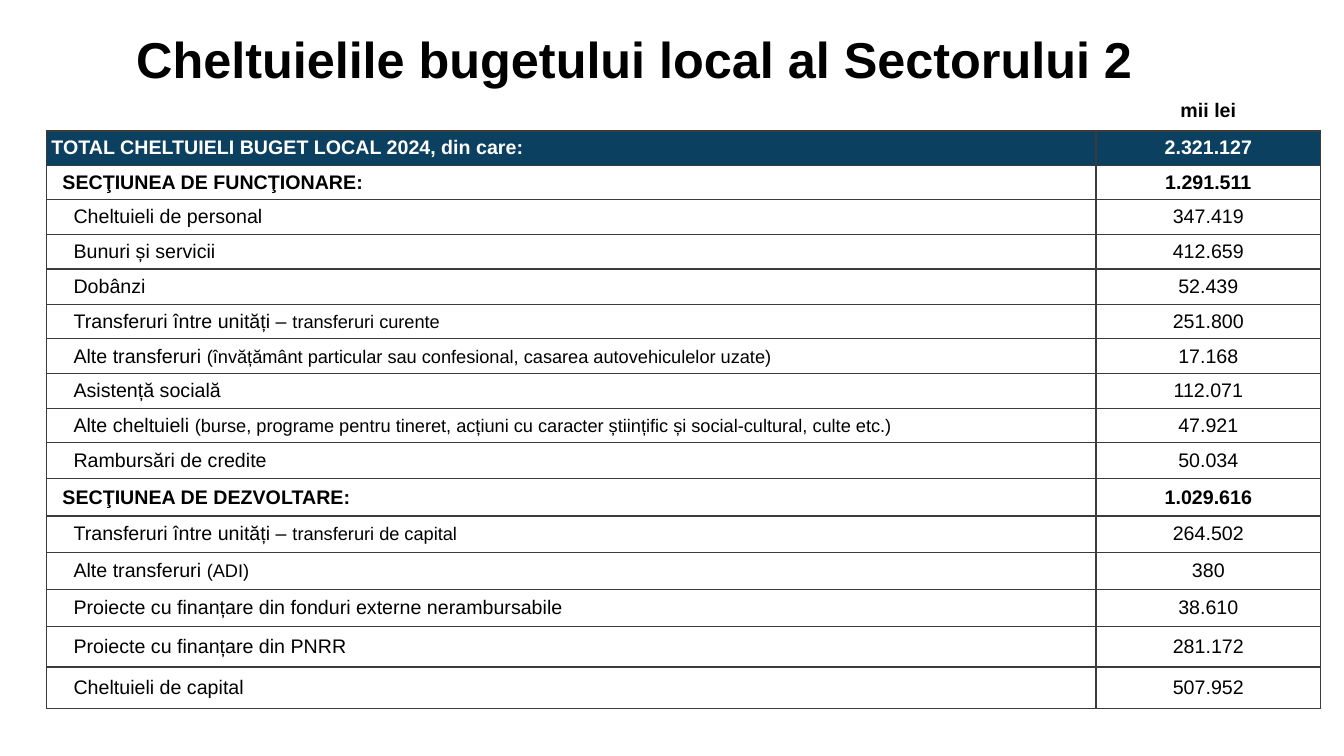
from lxml import etree
from pptx import Presentation
from pptx import util as u
from pptx.dml.color import RGBColor
from pptx.enum import text
from pptx.oxml.ns import qn

TITLE = "Cheltuielile bugetului local al Sectorului 2"
UNIT = "mii lei"
BUDGET = [
    ("total", "TOTAL CHELTUIELI BUGET LOCAL 2024, din care:", "", "2.321.127"),
    ("section", "SECŢIUNEA DE FUNCŢIONARE:", "", "1.291.511"),
    ("item", "Cheltuieli de personal", "", "347.419"),
    ("item", "Bunuri și servicii", "", "412.659"),
    ("item", "Dobânzi", "", "52.439"),
    ("item", "Transferuri între unități – ", "transferuri curente", "251.800"),
    ("item", "Alte transferuri ",
     "(învățământ particular sau confesional, casarea autovehiculelor uzate)", "17.168"),
    ("item", "Asistență socială", "", "112.071"),
    ("item", "Alte cheltuieli ",
     "(burse, programe pentru tineret, acțiuni cu caracter științific și social-cultural, culte etc.)",
     "47.921"),
    ("item", "Rambursări de credite", "", "50.034"),
    ("section", "SECŢIUNEA DE DEZVOLTARE:", "", "1.029.616"),
    ("item", "Transferuri între unități – ", "transferuri de capital", "264.502"),
    ("item", "Alte transferuri ", "(ADI)", "380"),
    ("item", "Proiecte cu finanțare din fonduri externe nerambursabile", "", "38.610"),
    ("item", "Proiecte cu finanțare din PNRR", "", "281.172"),
    ("item", "Cheltuieli de capital", "", "507.952"),
]
COLUMN_WIDTHS = [10.41, 2.23]
ROW_HEIGHTS = [0.4, 0.34, 0.34, 0.35, 0.34, 0.35, 0.34, 0.35, 0.34, 0.34,
               0.36, 0.37, 0.36, 0.37, 0.37, 0.4, 0.41]
INDENTS = {"total": 0.05, "section": 0.16, "item": 0.27}


def rgb(value):
    return RGBColor.from_string(value)


class BudgetSlide:
    font = "Arial"
    ink = "000000"
    paper = "FFFFFF"
    navy = "0B4060"
    rule = "3B3B3B"
    size = 14
    detail_size = 13

    def __init__(self, deck):
        self.slide = deck.slides.add_slide(deck.slide_layouts[5])

    def format_run(self, run, size, color, bold):
        run.font.name = self.font
        run.font.size = u.Pt(size)
        run.font.bold = bold
        run.font.color.rgb = rgb(color)

    def title(self, wording, left, top, width, height):
        heading = self.slide.shapes.title
        heading.left, heading.top = u.Inches(left), u.Inches(top)
        heading.width, heading.height = u.Inches(width), u.Inches(height)
        frame = heading.text_frame
        frame.text = wording
        frame.vertical_anchor = text.MSO_ANCHOR.MIDDLE
        line = frame.paragraphs[0]
        line.alignment = text.PP_ALIGN.LEFT
        self.format_run(line.runs[0], 36, self.ink, True)

    def borders(self, cell, outer, bottom):
        properties = cell._tc.get_or_add_tcPr()
        for side, color in (("L", outer), ("R", outer), ("T", outer), ("B", bottom)):
            edge = etree.SubElement(properties, qn(f"a:ln{side}"), w=str(u.Pt(1)))
            paint = etree.SubElement(edge, qn("a:solidFill"))
            etree.SubElement(paint, qn("a:srgbClr"), val=color)

    def cell(self, cell, wording="", detail="", kind="item", indent=0,
             centred=False, outer=None):
        self.borders(cell, outer or self.rule, self.rule)
        if kind == "total":
            cell.fill.solid()
            cell.fill.fore_color.rgb = rgb(self.navy)
        else:
            cell.fill.background()
        cell.margin_left = u.Inches(indent)
        cell.margin_right = cell.margin_top = cell.margin_bottom = 0
        cell.vertical_anchor = text.MSO_ANCHOR.MIDDLE
        line = cell.text_frame.paragraphs[0]
        line.alignment = text.PP_ALIGN.CENTER if centred else text.PP_ALIGN.LEFT
        color = self.paper if kind == "total" else self.ink
        for part, size in ((wording, self.size), (detail, self.detail_size)):
            if part:
                run = line.add_run()
                run.text = part
                self.format_run(run, size, color, kind != "item")

    def budget_table(self, left, top):
        table = self.slide.shapes.add_table(
            len(ROW_HEIGHTS), len(COLUMN_WIDTHS), u.Inches(left), u.Inches(top),
            u.Inches(sum(COLUMN_WIDTHS)), u.Inches(sum(ROW_HEIGHTS))).table
        table.first_row = table.horz_banding = False
        for column, width in zip(table.columns, COLUMN_WIDTHS):
            column.width = u.Inches(width)
        for row, height in zip(table.rows, ROW_HEIGHTS):
            row.height = u.Inches(height)
        self.cell(table.cell(0, 0), outer=self.paper)
        self.cell(table.cell(0, 1), UNIT, kind="section", centred=True, outer=self.paper)
        for index, (kind, name, detail, amount) in enumerate(BUDGET, 1):
            self.cell(table.cell(index, 0), name, detail, kind, INDENTS[kind])
            self.cell(table.cell(index, 1), amount, kind=kind, centred=True)


def main():
    deck = Presentation()
    deck.slide_width, deck.slide_height = u.Inches(13.33), u.Inches(7.5)
    budget = BudgetSlide(deck)
    budget.title(TITLE, 1.25, 0.1, 13.33, 0.95)
    budget.budget_table(0.46, 0.9)
    deck.save("out.pptx")


if __name__ == "__main__":
    main()
